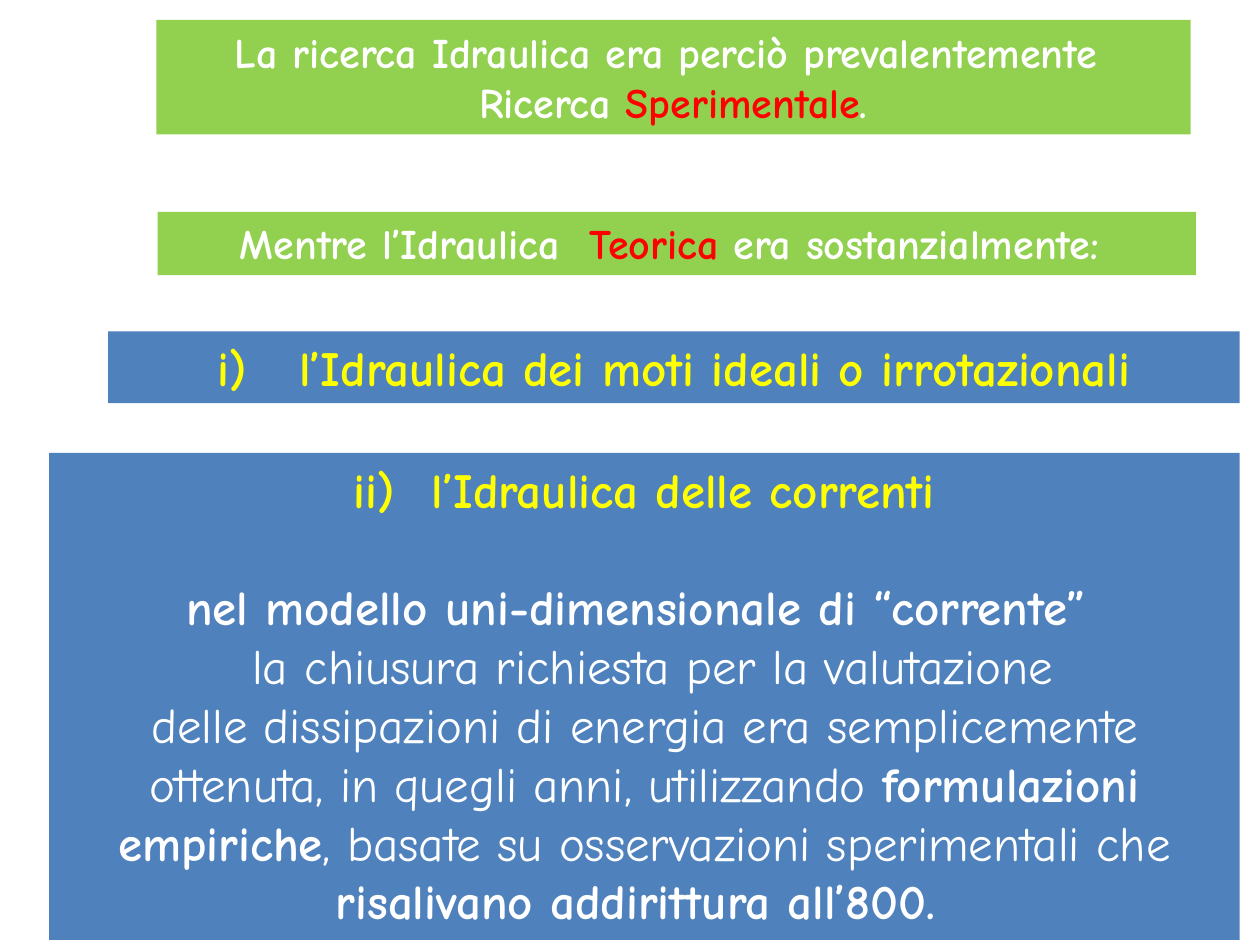
from lxml import etree
from pptx import Presentation
from pptx import util as u
from pptx.dml.color import RGBColor
from pptx.enum import shapes, text
from pptx.oxml.ns import qn

FONT = "Comic Neue"
WHITE = RGBColor(0xFF, 0xFF, 0xFF)
RED = RGBColor(0xFF, 0x00, 0x00)
YELLOW = RGBColor(0xFF, 0xFF, 0x00)
GREEN = RGBColor(0x92, 0xD0, 0x50)
BLUE = RGBColor(0x4F, 0x81, 0xBD)
SMALL, LARGE = 24, 28
BLANK_LINE = 33.5

# Each run is (words, colour, bold).
EXPERIMENTAL = [
    {"runs": [("La ricerca Idraulica era perciò prevalentemente ", WHITE, True)]},
    {"runs": [(" Ricerca ", WHITE, True), ("Sperimentale", RED, True),
              (". ", WHITE, True)]},
]
THEORETICAL = [
    {"runs": [("Mentre l’Idraulica  ", WHITE, True), ("Teorica", RED, True),
              (" era sostanzialmente: ", WHITE, True)]},
]
IDEAL_FLOWS = [
    {"number": 1, "hang": 1.65,
     "runs": [("l’Idraulica dei moti ideali o irrotazionali", YELLOW, True)]},
]
CURRENTS = [
    {"number": 2, "hang": 1.57,
     "runs": [("l’Idraulica delle correnti", YELLOW, True)]},
    {"before": BLANK_LINE,
     "runs": [("nel modello uni-dimensionale di “corrente” ", WHITE, True)]},
    {"runs": [(" la chiusura richiesta per la valutazione", WHITE, False)]},
    {"runs": [("delle dissipazioni di energia era semplicemente ottenuta, "
               "in quegli anni, utilizzando ", WHITE, False),
              ("formulazioni empiriche", WHITE, True),
              (", basate su osservazioni sperimentali che ", WHITE, False),
              ("risalivano addirittura all’800. ", WHITE, True)]},
]


def set_numbering(para, number, hang):
    props = para._p.get_or_add_pPr()
    props.set("marL", str(u.Cm(hang)))
    props.set("indent", str(-u.Cm(hang)))
    if number:
        etree.SubElement(props, qn("a:buFont"), typeface="+mj-lt")
        etree.SubElement(props, qn("a:buAutoNum"), type="romanLcParenR",
                         startAt=str(number))
    else:
        etree.SubElement(props, qn("a:buNone"))


def fill_box(box, place, colour, size, wrap, paragraphs):
    box.left, box.top, box.width, box.height = (u.Cm(length) for length in place)
    box.fill.solid()
    box.fill.fore_color.rgb = colour
    box.line.fill.background()
    frame = box.text_frame
    frame.word_wrap = wrap
    frame.auto_size = text.MSO_AUTO_SIZE.NONE
    frame.vertical_anchor = text.MSO_ANCHOR.TOP
    for index, content in enumerate(paragraphs):
        para = frame.paragraphs[0] if index == 0 else frame.add_paragraph()
        set_numbering(para, content.get("number"), content.get("hang", 0))
        para.alignment = text.PP_ALIGN.CENTER
        para.space_before = u.Pt(content.get("before", 0))
        for words, ink, bold in content["runs"]:
            span = para.add_run()
            span.text = words
            span.font.name = FONT
            span.font.size = u.Pt(size)
            span.font.bold = bold
            span.font.color.rgb = ink


def add_band(page):
    band = page.shapes.add_shape(shapes.MSO_SHAPE.RECTANGLE, 0, 0, 0, 0)
    band.shadow.inherit = False
    return band


def main():
    deck = Presentation()
    deck.slide_width, deck.slide_height = u.Cm(25.4), u.Cm(19.05)
    page = deck.slides.add_slide(deck.slide_layouts[1])
    title, body = page.placeholders
    fill_box(title, (3.15, 0.4, 20.85, 2.31), GREEN, SMALL, False, EXPERIMENTAL)
    fill_box(add_band(page), (3.18, 4.27, 20.93, 1.28), GREEN, SMALL, False, THEORETICAL)
    fill_box(add_band(page), (2.18, 6.68, 22.81, 1.45), BLUE, LARGE, True, IDEAL_FLOWS)
    fill_box(body, (0.99, 9.13, 24, 9.82), BLUE, LARGE, True, CURRENTS)
    deck.save("out.pptx")


if __name__ == "__main__":
    main()
